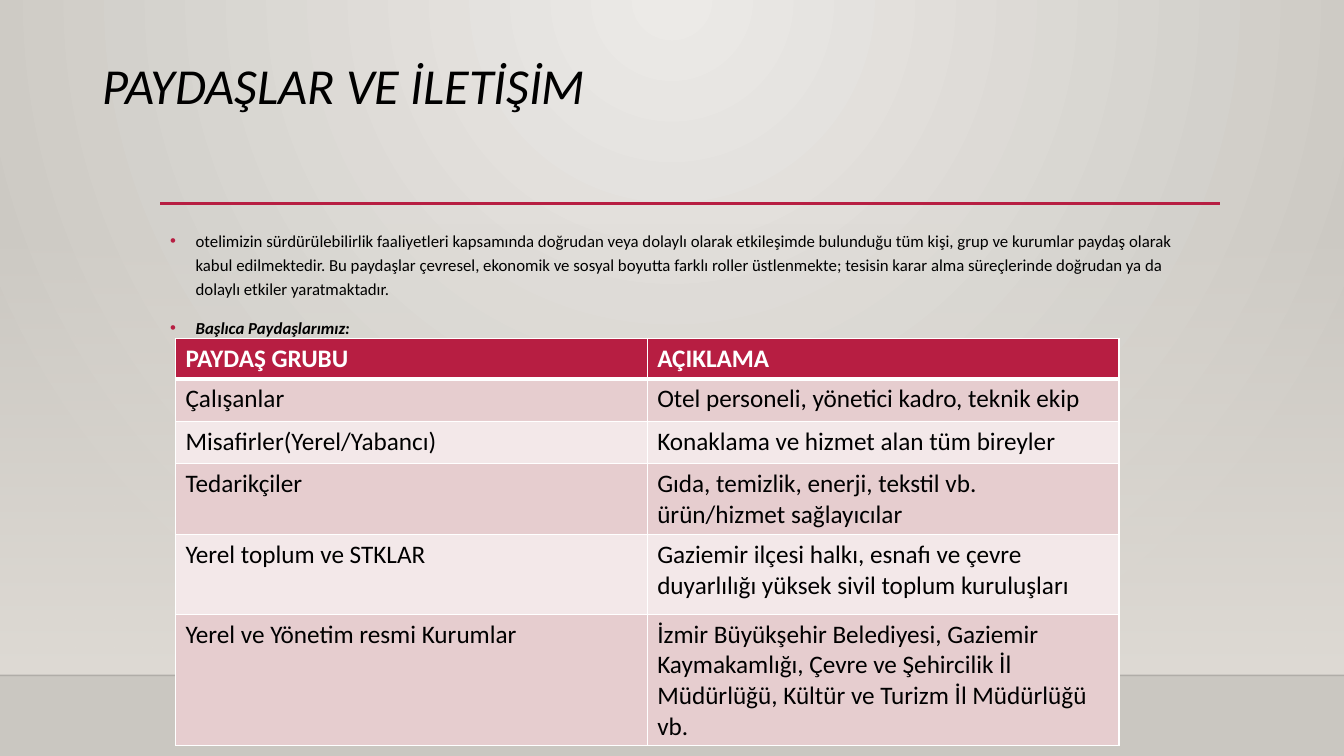
from lxml import etree
from pptx import Presentation
from pptx.dml.color import RGBColor
from pptx.enum.shapes import MSO_CONNECTOR, MSO_SHAPE
from pptx.oxml import parse_xml
from pptx.oxml.ns import nsdecls, qn
from pptx.util import Cm, Pt

STRAIGHT = MSO_CONNECTOR.STRAIGHT
RECTANGLE = MSO_SHAPE.RECTANGLE

FONT = "Calibri"
BLACK = RGBColor(0x00, 0x00, 0x00)
WHITE = RGBColor(0xFF, 0xFF, 0xFF)
CRIMSON = RGBColor(0xB7, 0x1E, 0x42)
ROSE = RGBColor(0xE6, 0xCD, 0xCF)
PALE_ROSE = RGBColor(0xF3, 0xE8, 0xE9)
LIGHT = RGBColor(0xEC, 0xEA, 0xE7)
STONE = RGBColor(0xCA, 0xC7, 0xC1)
SAND = RGBColor(0xDF, 0xDB, 0xD5)

SLIDE_W, SLIDE_H = 33.86, 19.05
FLOOR_Y = 17.02

TITLE = "PAYDAŞLAR VE İLETİŞİM"
INTRO = (
    "otelimizin sürdürülebilirlik faaliyetleri kapsamında doğrudan veya dolaylı "
    "olarak etkileşimde bulunduğu tüm kişi, grup ve kurumlar paydaş olarak kabul "
    "edilmektedir. Bu paydaşlar çevresel, ekonomik ve sosyal boyutta farklı roller "
    "üstlenmekte; tesisin karar alma süreçlerinde doğrudan ya da dolaylı etkiler "
    "yaratmaktadır."
)
SUBHEAD = "Başlıca Paydaşlarımız:"
STAKEHOLDERS = [
    ("PAYDAŞ GRUBU", "AÇIKLAMA"),
    ("Çalışanlar", "Otel personeli, yönetici kadro, teknik ekip"),
    ("Misafirler(Yerel/Yabancı)", "Konaklama ve hizmet alan tüm bireyler"),
    ("Tedarikçiler", "Gıda, temizlik, enerji, tekstil vb. ürün/hizmet sağlayıcılar"),
    ("Yerel toplum ve STKLAR",
     "Gaziemir ilçesi halkı, esnafı ve çevre duyarlılığı yüksek sivil toplum kuruluşları"),
    ("Yerel ve Yönetim resmi Kurumlar",
     "İzmir Büyükşehir Belediyesi, Gaziemir Kaymakamlığı, Çevre ve Şehircilik İl "
     "Müdürlüğü, Kültür ve Turizm İl Müdürlüğü vb."),
]
ROW_HEIGHTS = [0.61, 1.07, 1.07, 1.55, 2.01, 2.92]


def set_alpha(color_el, percent):
    etree.SubElement(color_el, qn("a:alpha")).set("val", str(percent * 1000))


def set_gradient(fill, first, last):
    fill.gradient()
    for stop, color in zip(fill.gradient_stops, (first, last)):
        stop.color.rgb = color


def add_run(p, text, size, color=BLACK, bold=False, italic=False):
    r = p.add_run()
    r.text = text
    r.font.name = FONT
    r.font.size = Pt(size)
    r.font.color.rgb = color
    r.font.bold = bold
    r.font.italic = italic


def add_line(s, x1, x2, y, color, width):
    line = s.shapes.add_connector(STRAIGHT, Cm(x1), Cm(y), Cm(x2), Cm(y))
    line.line.color.rgb = color
    line.line.width = Pt(width)
    etree.SubElement(line._element.spPr, qn("a:effectLst"))
    return line


def add_text_frame(s, box):
    tf = s.shapes.add_textbox(*map(Cm, box)).text_frame
    tf.word_wrap = True
    return tf


def add_backdrop(s, box):
    left, top, width, height = box
    fill = s.background.fill
    set_gradient(fill, LIGHT, STONE)
    grad = s._element.find(".//" + qn("p:bgPr")).find(qn("a:gradFill"))
    lin = grad.find(qn("a:lin"))
    grad.replace(lin, parse_xml(
        f'<a:path {nsdecls("a")} path="circle">'
        '<a:fillToRect l="43000" t="0" r="43000" b="100000"/></a:path>'))

    wall = s.shapes.add_shape(RECTANGLE, *map(Cm, box))
    wall.shadow.inherit = False
    wall.line.fill.background()
    set_gradient(wall.fill, SAND, SAND)
    wall.fill.gradient_angle = 270
    set_alpha(wall._element.spPr.find(".//" + qn("a:srgbClr")), 0)

    edge = add_line(s, left, left + width, top + height, BLACK, 1)
    set_alpha(edge._element.spPr.find(".//" + qn("a:srgbClr")), 20)


def add_title(s, box):
    p = add_text_frame(s, box).paragraphs[0]
    p.line_spacing = 0.9
    add_run(p, TITLE, 36, italic=True)


def add_bullet(p):
    pPr = p._p.get_or_add_pPr()
    pPr.set("marL", str(Cm(0.64)))
    pPr.set("indent", str(-Cm(0.64)))
    color = etree.SubElement(pPr, qn("a:buClr"))
    etree.SubElement(color, qn("a:srgbClr")).set("val", str(CRIMSON))
    etree.SubElement(pPr, qn("a:buFont")).set("typeface", "Arial")
    etree.SubElement(pPr, qn("a:buChar")).set("char", "•")


def add_body(s, box):
    tf = add_text_frame(s, box)
    intro, subhead = tf.paragraphs[0], tf.add_paragraph()
    for p in (intro, subhead):
        add_bullet(p)
        p.line_spacing = 1.2
    subhead.space_before = Pt(10)
    add_run(intro, INTRO, 12)
    add_run(subhead, SUBHEAD, 12, bold=True, italic=True)


def add_borders(cell, top, bottom):
    tcPr = cell._tc.get_or_add_tcPr()
    widths = {"lnL": 1, "lnR": 1, "lnT": top, "lnB": bottom}
    for i, (side, width) in enumerate(widths.items()):
        tcPr.insert(i, parse_xml(
            f'<a:{side} {nsdecls("a")} w="{Pt(width)}"><a:solidFill>'
            f'<a:srgbClr val="{WHITE}"/></a:solidFill></a:{side}>'))


def add_stakeholder_table(s, box):
    left, top, width = box
    columns = len(STAKEHOLDERS[0])
    table = s.shapes.add_table(
        len(STAKEHOLDERS), columns, Cm(left), Cm(top), Cm(width),
        Cm(sum(ROW_HEIGHTS))).table
    for column in table.columns:
        column.width = Cm(width / columns)
    for i, (texts, height) in enumerate(zip(STAKEHOLDERS, ROW_HEIGHTS)):
        table.rows[i].height = Cm(height)
        header = i == 0
        color = CRIMSON if header else ROSE if i % 2 else PALE_ROSE
        for j, text in enumerate(texts):
            cell = table.cell(i, j)
            cell.fill.solid()
            cell.fill.fore_color.rgb = color
            add_borders(cell, 3 if i == 1 else 1, 3 if header else 1)
            add_run(cell.text_frame.paragraphs[0], text, 18,
                    WHITE if header else BLACK, bold=header)


def main():
    prs = Presentation()
    prs.slide_width, prs.slide_height = Cm(SLIDE_W), Cm(SLIDE_H)
    s = prs.slides.add_slide(prs.slide_layouts[6])
    add_backdrop(s, (0, 5.61, SLIDE_W, FLOOR_Y - 5.61))
    add_line(s, 4.04, 30.73, 5.13, CRIMSON, 2.5)
    add_title(s, (2.34, 1.4, 29.21, 3.68))
    add_body(s, (4.04, 5.59, 26.67, 9.58))
    add_stakeholder_table(s, (4.42, 8.53, 23.77))
    prs.save("out.pptx")


if __name__ == "__main__":
    main()
